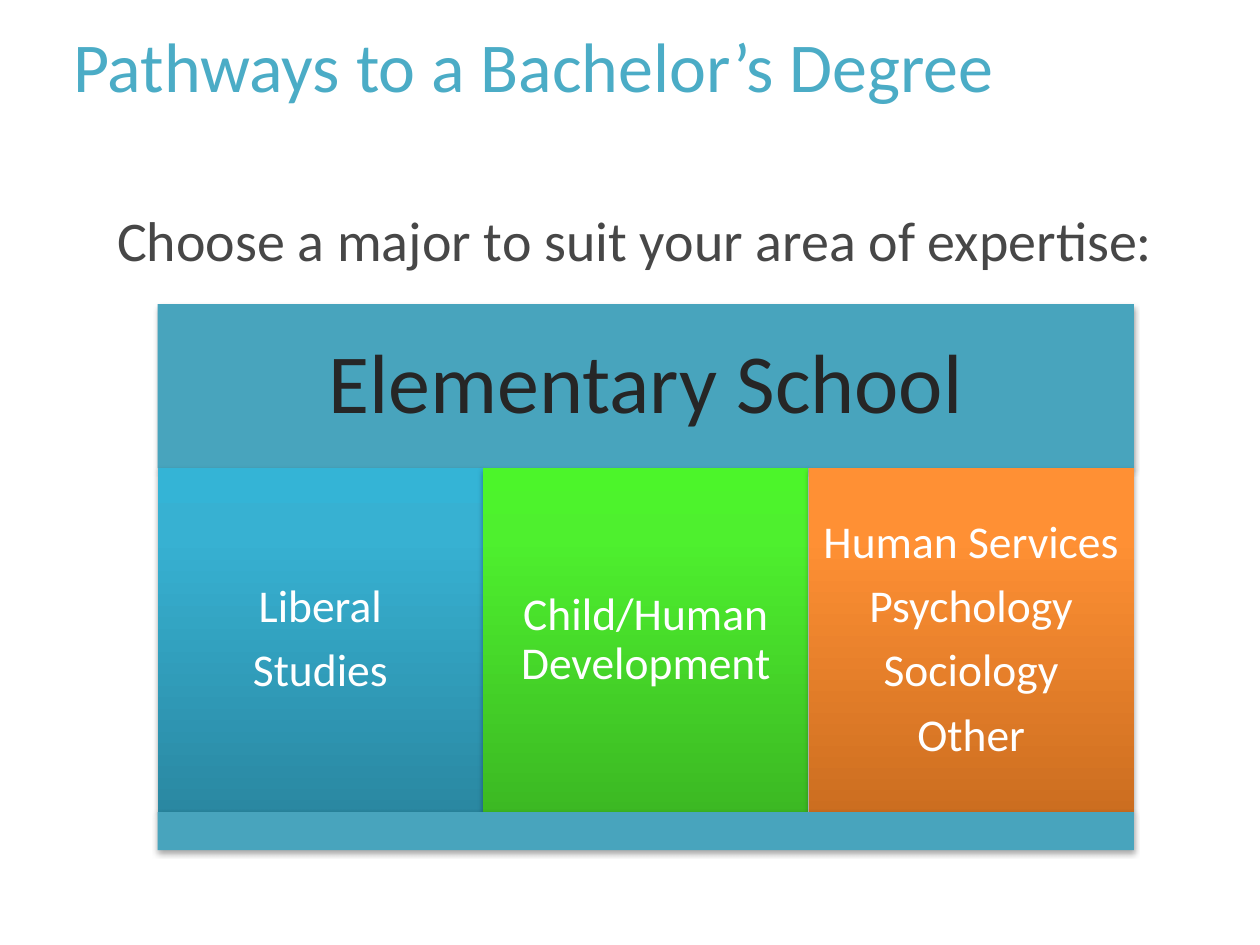
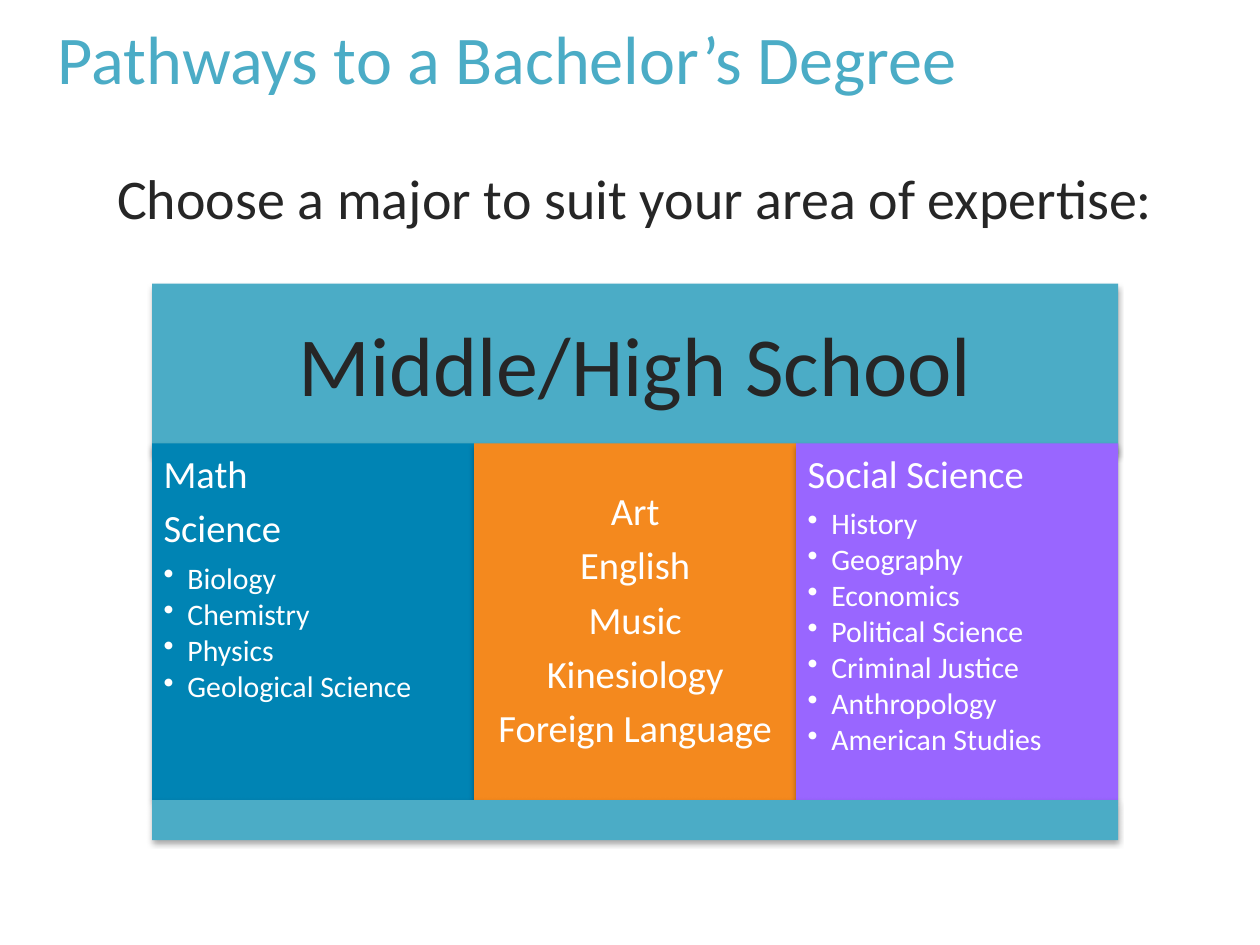
from copy import deepcopy

from lxml import etree
from pptx import Presentation
from pptx import util as u
from pptx.dml.color import RGBColor
from pptx.enum import shapes, text
from pptx.oxml.ns import qn

FONT = "Calibri"
COLORS = {
    "title": "4BACC6",
    "dark": "262626",
    "grey": "474747",
    "white": "FFFFFF",
    "elementary": "48A4BD",
    "secondary": "4BACC6",
    "math": "0084B4",
    "arts": "F4891E",
    "social": "9966FF",
}
GRADIENTS = {  # bottom to top
    "liberal": ("2A88A2", "37B1D2", "34B4D6"),
    "child": ("3CB923", "4EF02E", "4CF52A"),
    "human": ("CC6E20", "FF9034", "FF9136"),
}
GRADIENT_STOPS = (0, 0.8, 1)
TITLE = "Pathways to a Bachelor’s Degree"
SUBTITLE = "Choose a major to suit your area of expertise:"
ALIGN, ANCHOR = text.PP_ALIGN, text.MSO_ANCHOR


def rgb(name):
    return RGBColor.from_string(COLORS[name])


def set_font(p, size, color):
    for r in p.runs:
        r.font.name = FONT
        r.font.size = u.Pt(size)
        r.font.color.rgb = rgb(color)


def set_margins(tf, margin):
    tf.margin_left = tf.margin_right = u.Cm(margin)
    tf.margin_top = tf.margin_bottom = u.Cm(margin)


def add_line(s, box, words, size, color, align=ALIGN.LEFT, anchor=ANCHOR.TOP):
    tf = s.shapes.add_textbox(*map(u.Cm, box)).text_frame
    tf.word_wrap = True
    tf.vertical_anchor = anchor
    tf.text = words
    p = tf.paragraphs[0]
    p.alignment = align
    set_font(p, size, color)
    return tf


def add_title(s, box, size, anchor):
    tf = add_line(s, box, TITLE, size, "title", anchor=anchor)
    tf.margin_left = u.Cm(0.41)


def add_subtitle(s, top, color):
    add_line(s, (0.64, top, 24.33, 3.25), SUBTITLE, 32, color, ALIGN.CENTER)


def fill_shape(sp, fill):
    if fill not in GRADIENTS:
        sp.fill.solid()
        sp.fill.fore_color.rgb = rgb(fill)
        return
    sp.fill.gradient()
    sp.fill.gradient_angle = 90
    stops = next(sp._element.iter(qn("a:gsLst")))
    stops.append(deepcopy(stops[-1]))
    for stop, place, color in zip(sp.fill.gradient_stops, GRADIENT_STOPS, GRADIENTS[fill]):
        stop.position = place
        stop.color.rgb = RGBColor.from_string(color)


def add_shadow(sp):
    sp.shadow.inherit = False
    effects = next(sp._element.iter(qn("a:effectLst")))
    shadow = etree.SubElement(effects, qn("a:outerShdw"), blurRad="40000",
                              dist="23000", dir="5400000", rotWithShape="0")
    color = etree.SubElement(shadow, qn("a:srgbClr"), val="000000")
    etree.SubElement(color, qn("a:alpha"), val="35000")


def add_block(s, box, fill):
    sp = s.shapes.add_shape(shapes.MSO_SHAPE.RECTANGLE, *map(u.Cm, box))
    fill_shape(sp, fill)
    sp.line.fill.background()
    add_shadow(sp)
    return sp


def add_bullet(p):
    pPr = p._p.get_or_add_pPr()
    pPr.set("marL", str(u.Cm(0.48)))
    pPr.set("indent", str(-u.Cm(0.48)))
    etree.SubElement(pPr, qn("a:buChar"), char="•")


def write_lines(sp, lines, size, color, margin, align=ALIGN.CENTER, bullet_size=17):
    """Fill a block; lines that start with a bullet sign become list items."""
    tf = sp.text_frame
    tf.word_wrap = True
    tf.vertical_anchor = ANCHOR.MIDDLE if align == ALIGN.CENTER else ANCHOR.TOP
    set_margins(tf, margin)
    for i, line in enumerate(lines):
        p = tf.paragraphs[0] if i == 0 else tf.add_paragraph()
        is_item = line.startswith("• ")
        p.text = line.removeprefix("• ")
        p.alignment = align
        p.line_spacing = 0.9
        line_size = bullet_size if is_item else size
        p.space_after = u.Pt(round(line_size * (0.13 if is_item else 0.33), 1))
        if is_item:
            add_bullet(p)
        set_font(p, line_size, color)


def add_pathway(s, left, top, width, header_h, columns_top, columns_h, footer_h,
                fill, heading, columns, size, margin):
    """Heading band, equal columns of (fill, alignment, lines), closing band."""
    header = add_block(s, (left, top, width, header_h), fill)
    write_lines(header, [heading], 48, "dark", 0.51)
    column_w = width / len(columns)
    for i, (column_fill, align, lines) in enumerate(columns):
        column = add_block(s, (left + i * column_w, columns_top, column_w, columns_h), column_fill)
        write_lines(column, lines, size, "white", margin, align)
    add_block(s, (left, columns_top + columns_h, width, footer_h), fill)


def elementary_slide(prs):
    s = prs.slides.add_slide(prs.slide_layouts[6])
    add_title(s, (1.07, 0, 22.86, 2.62), 40, ANCHOR.MIDDLE)
    add_subtitle(s, 4.01, "grey")
    columns = [
        ("liberal", ALIGN.CENTER, ["Liberal", "Studies"]),
        ("child", ALIGN.CENTER, ["Child/Human Development"]),
        ("human", ALIGN.CENTER, ["Human Services", "Psychology", "Sociology", "Other"]),
    ]
    add_pathway(s, 3.18, 6.13, 19.68, 3.31, 9.44, 6.93, 0.77,
                "elementary", "Elementary School", columns, 26, 0.28)


def secondary_slide(prs):
    s = prs.slides.add_slide(prs.slide_layouts[6])
    add_title(s, (0.76, 0.2, 23.7, 2.34), 39, ANCHOR.TOP)
    add_subtitle(s, 3.18, "dark")
    columns = [
        ("math", ALIGN.LEFT, ["Math", "Science", "• Biology", "• Chemistry",
                              "• Physics", "• Geological Science"]),
        ("arts", ALIGN.CENTER, ["Art", "English", "Music", "Kinesiology",
                                "Foreign Language"]),
        ("social", ALIGN.LEFT, ["Social Science", "• History", "• Geography",
                                "• Economics", "• Political Science",
                                "• Criminal Justice", "• Anthropology",
                                "• American Studies"]),
    ]
    add_pathway(s, 3.07, 5.72, 19.47, 3.43, 8.94, 7.19, 0.81,
                "secondary", "Middle/High School", columns, 22, 0.23)


def main():
    prs = Presentation()
    prs.slide_width, prs.slide_height = u.Cm(25.4), u.Cm(19.05)
    elementary_slide(prs)
    secondary_slide(prs)
    prs.save("out.pptx")


if __name__ == "__main__":
    main()
